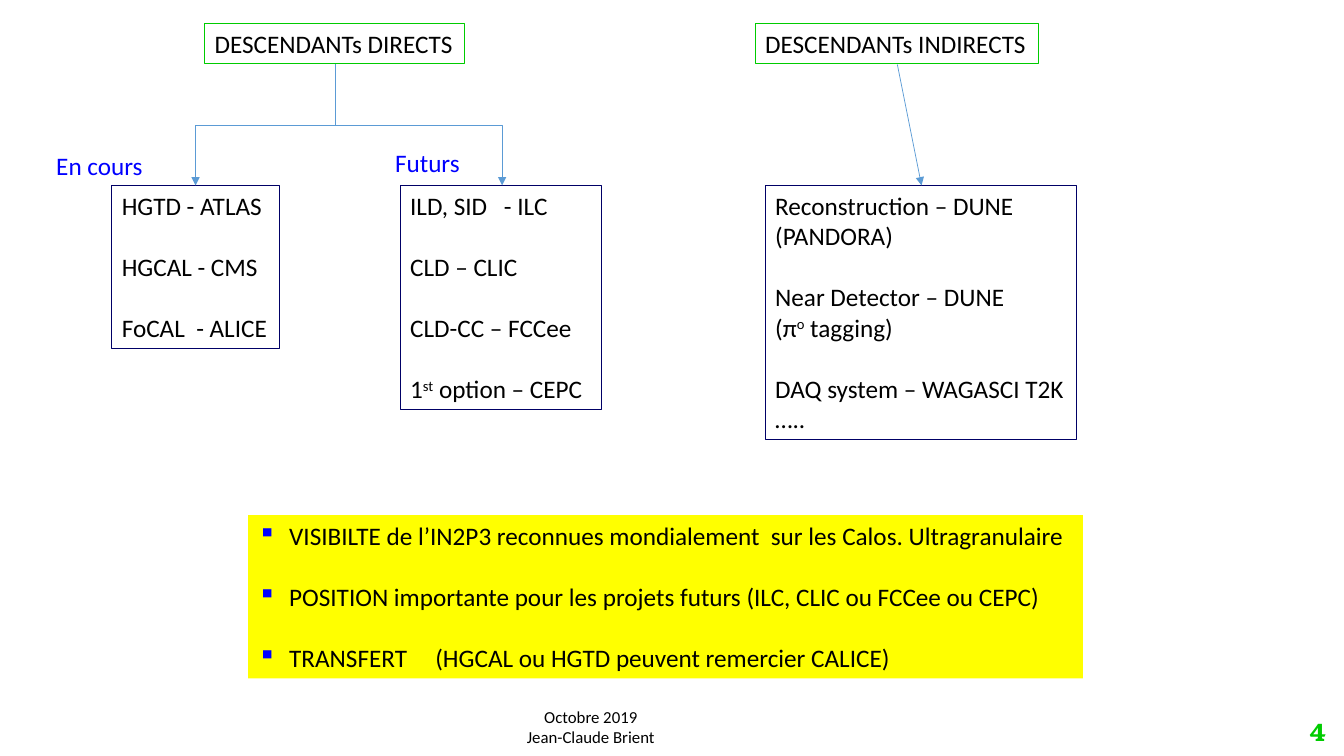
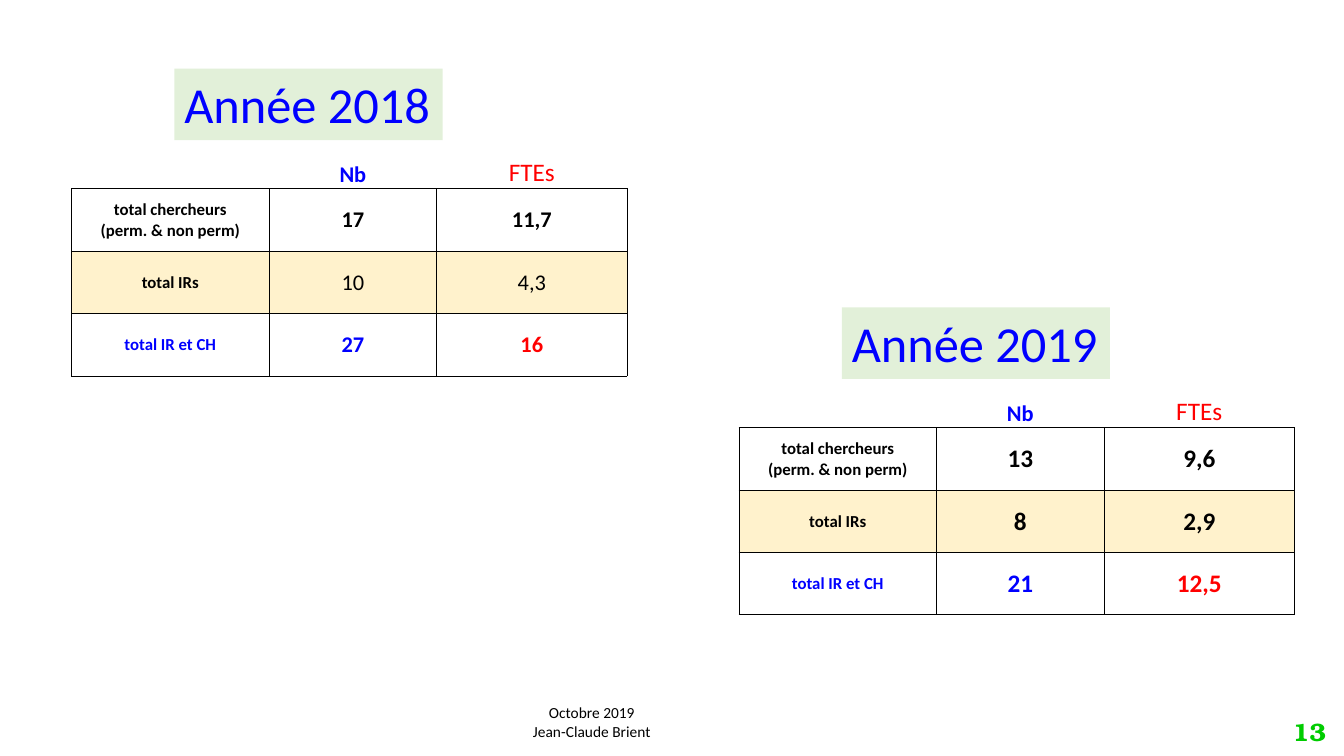
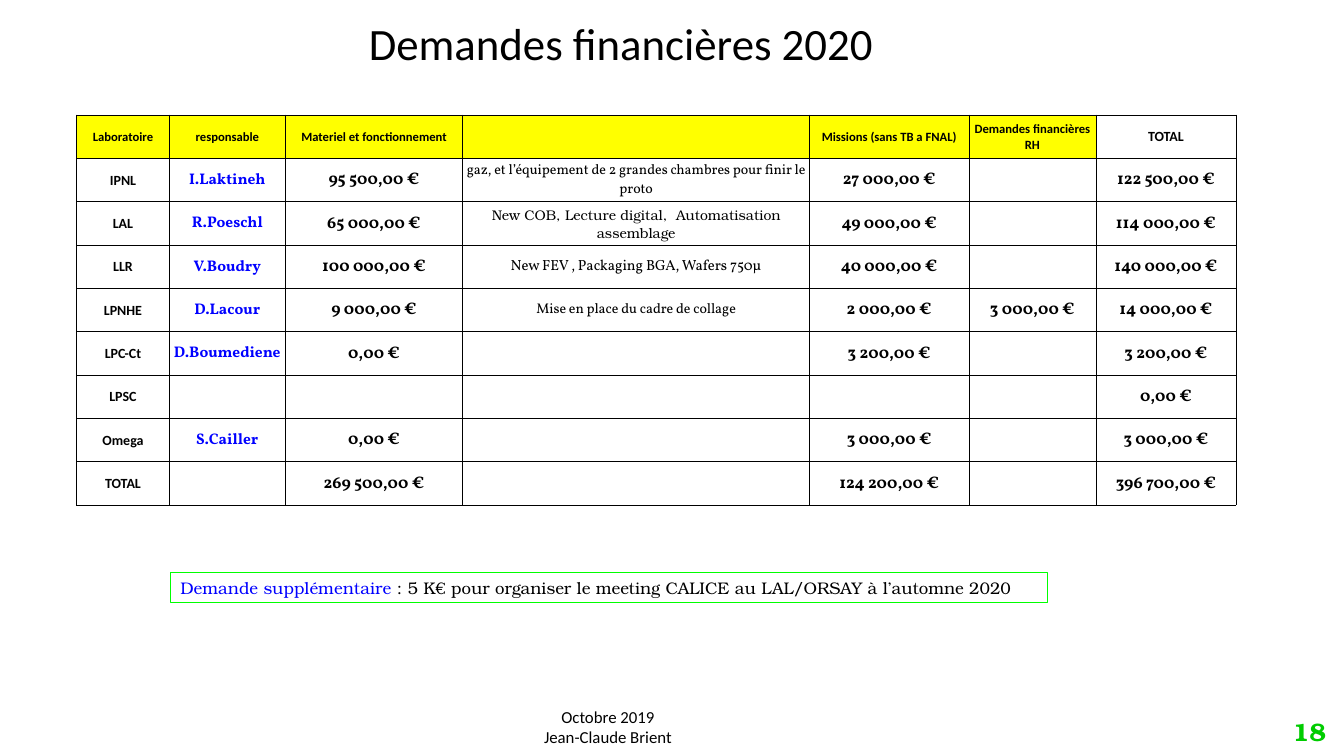
import pptx
import pptx.util
import pptx.dml.color
import pptx.enum.shapes
import pptx.enum.text
import pptx.oxml
import pptx.oxml.ns
from lxml import etree

Inches = pptx.util.Inches
Pt = pptx.util.Pt
qn = pptx.oxml.ns.qn
ALIGN = pptx.enum.text.PP_ALIGN
ANCHOR = pptx.enum.text.MSO_ANCHOR
SHAPE = pptx.enum.shapes.MSO_SHAPE
CONNECTOR = pptx.enum.shapes.MSO_CONNECTOR

COLORS = {
    "black": "000000", "blue": "0000FF", "red": "FF0000", "navy": "000066",
    "green": "00CC00", "lime": "00FF00", "arrow": "5B9BD5",
    "yellow": "FFFF00", "cream": "FFF2CC", "pale_green": "E2F0D9",
}
BODY = {"name": "Calibri", "size": 18, "color": "black"}
PAGE_NUMBER = {"name": "TeX Gyre Bonum", "size": 18, "color": "green", "bold": True}
LINE = 22  # height in points of one line of 18 pt body text


def rgb(color):
    return pptx.dml.color.RGBColor.from_string(COLORS[color])


def child(parent, tag, **attributes):
    return etree.SubElement(parent, qn(tag), attributes)


class Deck:
    """Holds the presentation, its style and the current slide."""

    def __init__(self):
        self.presentation = pptx.Presentation()
        self.presentation.slide_width = Inches(13.33)
        self.presentation.slide_height = Inches(7.5)
        self.slide = None

    def new_slide(self, number, footer_center, footer_top, footer_size=12):
        self.slide = self.presentation.slides.add_slide(self.presentation.slide_layouts[6])
        self.box(12.55, 7.06, 0.7, 0.4, [number], PAGE_NUMBER,
                 align=ALIGN.RIGHT, anchor=ANCHOR.MIDDLE, wrap=True)
        self.box(footer_center - 0.74, footer_top, 1.48, 0.5,
                 ["Octobre 2019", "Jean-Claude Brient"],
                 {**BODY, "size": footer_size}, align=ALIGN.CENTER)

    def add_runs(self, paragraph, content, style):
        """Content is a string or a list of (text, changes to the style)."""
        runs = [(content, {})] if isinstance(content, str) else content
        for text, changes in runs:
            run = paragraph.add_run()
            run.text = text
            values = {**style, **changes}
            values["size"] = Pt(values["size"])
            run.font.color.rgb = rgb(values.pop("color"))
            if values.pop("superscript", False):
                run.font._element.set("baseline", "30000")
            for key, value in values.items():
                setattr(run.font, key, value)

    def box(self, left, top, width, height, lines, style=BODY, fill=None, line=None,
            align=ALIGN.LEFT, anchor=ANCHOR.TOP, wrap=False, spaced=(), bullet=None, tabs=None):
        """Text in a plain box or rectangle; spaced lists lines preceded by a gap."""
        place = [Inches(value) for value in (left, top, width, height)]
        if fill or line:
            shape = self.slide.shapes.add_shape(SHAPE.RECTANGLE, *place)
            shape.shadow.inherit = False
        else:
            shape = self.slide.shapes.add_textbox(*place)
        if fill:
            shape.fill.solid()
            shape.fill.fore_color.rgb = rgb(fill)
        else:
            shape.fill.background()
        if line:
            shape.line.color.rgb = rgb(line)
            shape.line.width = Pt(0.75)
        else:
            shape.line.fill.background()
        frame = shape.text_frame
        fit = pptx.enum.text.MSO_AUTO_SIZE
        settings = {"word_wrap": wrap, "vertical_anchor": anchor,
                    "auto_size": fit.NONE if wrap else fit.SHAPE_TO_FIT_TEXT}
        for key, value in settings.items():
            setattr(frame, key, value)
        for index, content in enumerate(lines):
            paragraph = frame.add_paragraph() if index else frame.paragraphs[0]
            paragraph.alignment = align
            if index in spaced:
                paragraph.space_before = Pt(LINE)
            properties = paragraph._p.get_or_add_pPr()
            if bullet:
                properties.set("marL", str(Inches(0.31)))
                properties.set("indent", str(-Inches(0.31)))
                child(child(properties, "a:buClr"), "a:srgbClr", val=COLORS[bullet])
                child(properties, "a:buChar", char="▪")
            if tabs and index in tabs:
                child(child(properties, "a:tabLst"), "a:tab",
                      pos=str(Inches(tabs[index])), algn="l")
            self.add_runs(paragraph, content, style)

    def arrow(self, start, end, elbow=False):
        """Straight arrow, or an elbow that leaves and arrives vertically."""
        (x1, y1), (x2, y2) = start, end
        kind = CONNECTOR.STRAIGHT
        if elbow:
            # The preset runs sideways, so lay it out flat and then turn it.
            kind = CONNECTOR.ELBOW
            rightward = x2 > x1
            center_x, center_y = (x1 + x2) / 2, (y1 + y2) / 2
            half_width, half_height = (y2 - y1) / 2, abs(x2 - x1) / 2
            x1, x2 = center_x - half_width, center_x + half_width
            y1, y2 = center_y - half_height, center_y + half_height
            if rightward:
                x1, x2 = x2, x1
        connector = self.slide.shapes.add_connector(
            kind, *[Inches(value) for value in (x1, y1, x2, y2)])
        connector.line.color.rgb = rgb("arrow")
        connector.line.width = Pt(0.5)
        properties = connector._element.spPr
        child(properties.find(qn("a:ln")), "a:tailEnd", type="triangle")
        child(properties, "a:effectLst")
        if elbow:
            properties.find(qn("a:xfrm")).set("rot", "16200000" if rightward else "5400000")

    def borders(self, cell, sides):
        properties = cell._tc.get_or_add_tcPr()
        for index, side in enumerate("LRTB"):
            border = etree.Element(qn("a:ln" + side), w=str(Pt(0.5)))
            if side in sides:
                child(child(border, "a:solidFill"), "a:srgbClr", val=COLORS["black"])
            else:
                child(border, "a:noFill")
            properties.insert(index, border)

    def table(self, left, top, columns, row_height, rows, look):
        """look(row, column) gives (style, fill, border sides, anchor)."""
        table = self.slide.shapes.add_table(
            len(rows), len(columns), Inches(left), Inches(top),
            Inches(sum(columns)), Inches(row_height * len(rows))).table
        table.first_row = table.horz_banding = False
        for column, width in zip(table.columns, columns):
            column.width = Inches(width)
        for row_index, row in enumerate(rows):
            table.rows[row_index].height = Inches(row_height)
            for column_index, text in enumerate(row):
                cell = table.cell(row_index, column_index)
                style, fill, sides, anchor = look(row_index, column_index)
                settings = {"margin_left": Inches(0.01), "margin_right": Inches(0.01),
                            "margin_top": Inches(0.01), "margin_bottom": 0,
                            "vertical_anchor": anchor}
                for key, value in settings.items():
                    setattr(cell, key, value)
                if fill:
                    cell.fill.solid()
                    cell.fill.fore_color.rgb = rgb(fill)
                else:
                    cell.fill.background()
                self.borders(cell, sides)
                for index, line in enumerate(text.split("\n") if text else []):
                    frame = cell.text_frame
                    paragraph = frame.add_paragraph() if index else frame.paragraphs[0]
                    paragraph.alignment = ALIGN.CENTER
                    self.add_runs(paragraph, line, style)


def descendants(deck):
    deck.new_slide("4", 5.86, 6.96)
    raised = {"superscript": True}
    # Project lists
    deck.box(1.11, 1.84, 1.66, 1.62, ["HGTD - ATLAS", "HGCAL - CMS", "FoCAL  - ALICE"],
             line="navy", spaced=(1, 2))
    deck.box(3.97, 1.84, 2, 2.22,
             ["ILD, SID\t- ILC", "CLD – CLIC", "CLD-CC – FCCee",
              [("1", {}), ("st", raised), (" option – CEPC", {})]],
             line="navy", spaced=(1, 2, 3), tabs={0: 0.93})
    deck.box(7.59, 1.84, 3.09, 2.52,
             ["Reconstruction – DUNE", "(PANDORA)", "Near Detector – DUNE",
              [("(π", {}), ("ο", raised), (" tagging)", {})],
              "DAQ system – WAGASCI T2K", "….."],
             line="navy", spaced=(2, 4))
    # Headings and arrows
    deck.box(2.03, 0.23, 2.58, 0.4, ["DESCENDANTs DIRECTS"], line="green")
    deck.box(7.49, 0.23, 2.81, 0.4, ["DESCENDANTs INDIRECTS"], line="green")
    for target in (1.94, 4.98):
        deck.arrow((3.33, 0.64), (target, 1.84), elbow=True)
    deck.arrow((8.9, 0.64), (9.14, 1.84))
    # Conclusions
    deck.box(2.46, 5.11, 8.28, 1.62,
             ["VISIBILTE de l’IN2P3 reconnues mondialement  sur les Calos. Ultragranulaire",
              "POSITION importante pour les projets futurs (ILC, CLIC ou FCCee ou CEPC)",
              "TRANSFERT\t(HGCAL ou HGTD peuvent remercier CALICE)"],
             fill="yellow", spaced=(1, 2), bullet="blue", tabs={2: 1.76})
    # Time labels
    blue = {**BODY, "color": "blue"}
    deck.box(0.46, 1.44, 1.07, 0.4, ["En cours"], blue)
    deck.box(3.82, 1.41, 0.85, 0.4, ["Futurs"], blue)


def staff_table(deck, left, top, year, numbers, size, engineers_bold):
    labels = ["total chercheurs\n(perm. & non perm)", "total IRs", "total IR et CH"]
    rows = [("", "Nb", "FTEs")] + [(label, *pair) for label, pair in zip(labels, numbers)]

    def look(row, column):
        accent = "red" if column == 2 else "blue"
        if row == 0:
            style = {**BODY, "size": 18 if column == 2 else 16,
                     "color": accent, "bold": column == 1}
            return style, None, "B", ANCHOR.BOTTOM
        style = {**BODY, "size": size if column else 12,
                 "color": accent if row == 3 else "black",
                 "bold": row != 2 or column == 0 or engineers_bold}
        return style, "cream" if row == 2 else None, "LRTB", ANCHOR.MIDDLE

    deck.table(left, top, [1.96, 1.66, 1.89], 0.62, rows, look)
    deck.box(left + 1.02, top - 0.57, 2.66, 0.71, ["Année " + year],
             {**BODY, "size": 36, "color": "blue"}, fill="pale_green")


def staff(deck):
    deck.new_slide("13", 5.87, 6.93, footer_size=11)
    staff_table(deck, 0.71, 1.25, "2018",
                [("17", "11,7"), ("10", "4,3"), ("27", "16")], 16, False)
    staff_table(deck, 7.33, 3.62, "2019",
                [("13", "9,6"), ("8", "2,9"), ("21", "12,5")], 18, True)


def budget(deck):
    deck.new_slide("18", 6.03, 6.96)
    deck.box(3.56, 0.11, 5.26, 0.64, ["Demandes financières 2020"], {**BODY, "size": 32})
    # Requests by laboratory
    rows = [
        ("Laboratoire", "responsable", "Materiel et fonctionnement", "",
         "Missions (sans TB a FNAL)", "Demandes financières RH", "TOTAL"),
        ("IPNL", "I.Laktineh", "95 500,00 €",
         "gaz, et l’équipement de 2 grandes chambres pour finir le proto",
         "27 000,00 €", "", "122 500,00 €"),
        ("LAL", "R.Poeschl", "65 000,00 €",
         "New COB, Lecture digital,  Automatisation assemblage",
         "49 000,00 €", "", "114 000,00 €"),
        ("LLR", "V.Boudry", "100 000,00 €", "New FEV , Packaging BGA, Wafers 750µ",
         "40 000,00 €", "", "140 000,00 €"),
        ("LPNHE", "D.Lacour", "9 000,00 €", "Mise en place du cadre de collage",
         "2 000,00 €", "3 000,00 €", "14 000,00 €"),
        ("LPC-Ct", "D.Boumediene", "0,00 €", "", "3 200,00 €", "", "3 200,00 €"),
        ("LPSC", "", "", "", "", "", "0,00 €"),
        ("Omega", "S.Cailler", "0,00 €", "", "3 000,00 €", "", "3 000,00 €"),
        ("TOTAL", "", "269 500,00 €", "", "124 200,00 €", "", "396 700,00 €"),
    ]
    label = {**BODY, "size": 10, "bold": True}
    amount = {"name": "Vollkorn", "size": 12, "color": "black", "bold": True}
    person = {**amount, "size": 11, "color": "blue"}
    note = {**amount, "size": 10, "bold": False}
    column_styles = {0: label, 1: person, 3: note}
    special_notes = {2: {"name": "TeX Gyre Bonum"}, 3: {"size": 10.5}}

    def look(row, column):
        style, fill = column_styles.get(column, amount), None
        if row == 0:
            last = column == 6
            style = label if last else {**label, "size": 9}
            fill = None if last else "yellow"
        elif column == 3:
            style = {**style, **special_notes.get(row, {})}
        return style, fill, "LRTB", ANCHOR.MIDDLE

    deck.table(0.76, 1.14, [0.92, 1.15, 1.76, 3.44, 1.58, 1.26, 1.39], 0.43, rows, look)
    # Extra request
    deck.box(1.69, 5.68, 8.7, 0.3,
             [[("Demande supplémentaire ", {"color": "blue"}),
               (": 5 K€ pour organiser le meeting CALICE au LAL/ORSAY à l’automne 2020", {})]],
             {"name": "TeX Gyre Bonum", "size": 12, "color": "black"}, line="lime")


def main():
    deck = Deck()
    for build in (descendants, staff, budget):
        build(deck)
    deck.presentation.save("out.pptx")


if __name__ == "__main__":
    main()
